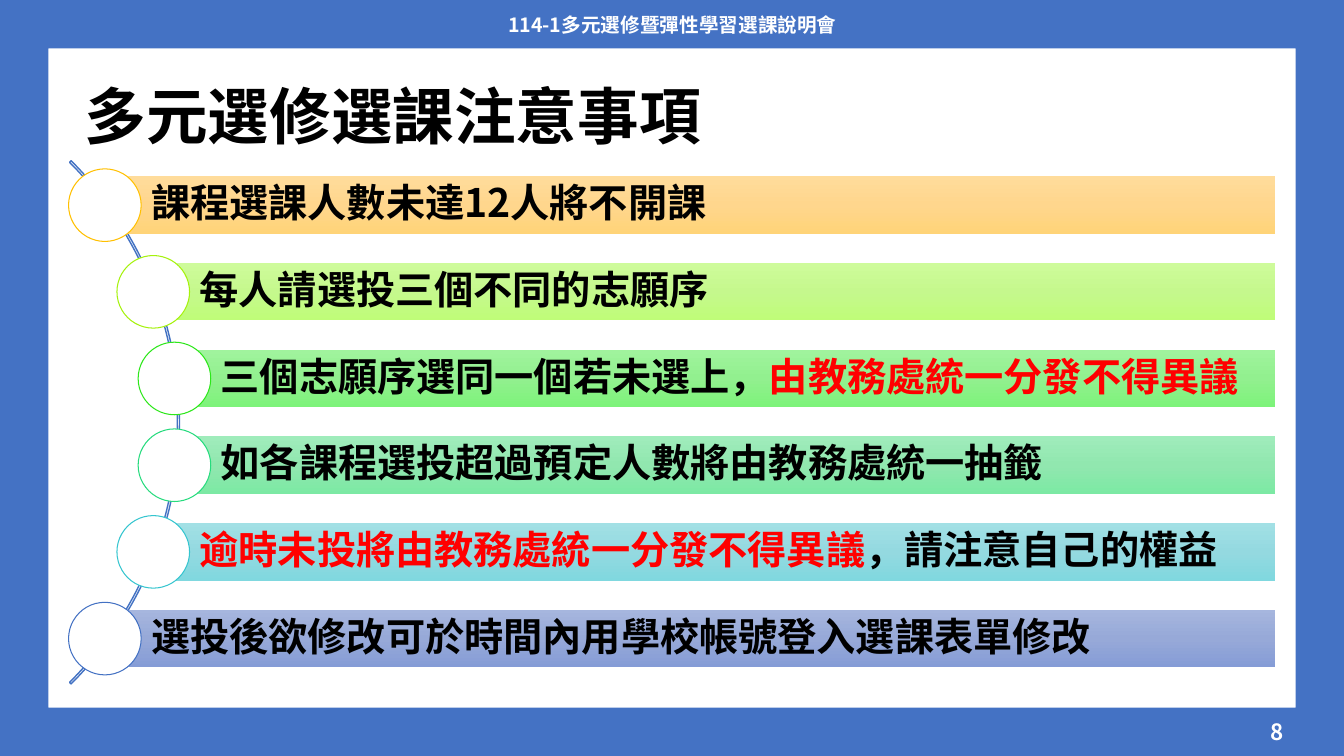
"""Build the slide of course selection notes."""
from dataclasses import dataclass

import pptx
import pptx.dml.color
import pptx.enum.shapes
import pptx.enum.text
import pptx.oxml
import pptx.oxml.ns
import pptx.util
from copy import deepcopy

Inches = pptx.util.Inches
Shape = pptx.enum.shapes.MSO_SHAPE
Align = pptx.enum.text.PP_ALIGN
qn = pptx.oxml.ns.qn


@dataclass(frozen=True)
class Theme:
    font: str = "Noto Sans CJK TC"
    blue: str = "4472C4"
    arc: str = "4372C3"
    white: str = "FFFFFF"
    black: str = "000000"
    red: str = "FF0000"
    title: int = 44
    item: int = 28
    number: int = 16
    header: int = 14


THEME = Theme()


@dataclass(frozen=True)
class Note:
    runs: tuple[tuple[str, str], ...]
    ring: str
    shades: tuple[str, str, str]


NOTES = (
    Note((("課程選課人數未達12人將不開課", THEME.black),),
         "FFC000", ("FFDC9B", "FFD68D", "FFD478")),
    Note((("每人請選投三個不同的志願序", THEME.black),),
         "A5F20C", ("CEFB9B", "C5F88D", "BFFD78")),
    Note((("三個志願序選同一個若未選上，", THEME.black),
          ("由教務處統一分發不得異議", THEME.red)),
         "2DE71A", ("A0F39D", "92F08F", "7DF37A")),
    Note((("如各課程選投超過預定人數將由教務處統一抽籤", THEME.black),),
         "27DB7E", ("9FECBB", "91E7AF", "7CE9A4")),
    Note((("逾時未投將由教務處統一分發不得異議", THEME.red),
          ("，請注意自己的權益", THEME.black)),
         "35C5CF", ("A2E0E5", "94D9E0", "80D8DF")),
    Note((("選投後欲修改可於時間內用學校帳號登入選課表單修改", THEME.black),),
         "4371C3", ("A6B6DE", "97A9D8", "859CD6")),
)
LEFTS = (1.04, 1.52, 1.73)
RIGHT = 12.65
TOP, STEP = 1.75, 0.86
BAR, RING = 0.57, 0.72


def color(code: str) -> pptx.dml.color.RGBColor:
    return pptx.dml.color.RGBColor.from_string(code)


def write(shape, runs, *, size: int, align=Align.LEFT, space: float = 1.0,
          inset=(0.1, 0.05, 0.1, 0.05)) -> None:
    frame = shape.text_frame
    frame.word_wrap = True
    frame.auto_size = pptx.enum.text.MSO_AUTO_SIZE.NONE
    frame.vertical_anchor = pptx.enum.text.MSO_ANCHOR.MIDDLE
    (frame.margin_left, frame.margin_top,
     frame.margin_right, frame.margin_bottom) = map(Inches, inset)
    para = frame.paragraphs[0]
    para.alignment = align
    para.line_spacing = space
    for text, code in runs:
        run = para.add_run()
        run.text = text
        run.font.size = pptx.util.Pt(size)
        run.font.bold = True
        run.font.name = THEME.font
        run.font.color.rgb = color(code)
        east = pptx.oxml.parse_xml(
            f'<a:ea {pptx.oxml.ns.nsdecls("a")} typeface="{THEME.font}"/>')
        run.font._element.find(qn("a:latin")).addnext(east)


def draw(slide, kind, box, *, fill: str | None = None,
         line: str | None = None, width: float = 0.75):
    shape = slide.shapes.add_shape(kind, *map(Inches, box))
    shape.shadow.inherit = False
    if fill:
        shape.fill.solid()
        shape.fill.fore_color.rgb = color(fill)
    else:
        shape.fill.background()
    if line:
        shape.line.color.rgb = color(line)
        shape.line.width = pptx.util.Pt(width)
    else:
        shape.line.fill.background()
    return shape


def blend(shape, shades: tuple[str, str, str]) -> None:
    shape.fill.gradient()
    shape.fill.gradient_angle = 270
    first = shape.element.spPr.find(".//" + qn("a:gs"))
    first.addnext(deepcopy(first))
    for spot, (stop, code) in enumerate(zip(shape.fill.gradient_stops, shades)):
        stop.position = spot / 2
        stop.color.rgb = color(code)


def add_note(slide, row: int, note: Note) -> None:
    left = LEFTS[min(row, len(NOTES) - 1 - row)]
    top = TOP + row * STEP
    bar = draw(slide, Shape.RECTANGLE, (left, top, RIGHT - left, BAR))
    blend(bar, note.shades)
    write(bar, note.runs, size=THEME.item, space=0.9,
          inset=(0.46, 0.08, 0.08, 0.08))
    draw(slide, Shape.OVAL,
         (left - RING / 2, top + (BAR - RING) / 2, RING, RING),
         fill=THEME.white, line=note.ring)


def main() -> None:
    deck = pptx.Presentation()
    deck.slide_width, deck.slide_height = Inches(13.33), Inches(7.5)
    slide = deck.slides.add_slide(deck.slide_layouts[5])

    border = draw(slide, Shape.FRAME, (0, 0, 13.33, 7.5), fill=THEME.blue)
    border.adjustments[0] = 0.064

    title = slide.shapes.title
    title.left, title.top, title.width, title.height = map(
        Inches, (0.74, 0.6, 11.8, 1.18))
    write(title, [("多元選修選課注意事項", THEME.black)],
          size=THEME.title, space=0.9)

    arc = draw(slide, Shape.BLOCK_ARC, (-5.56, 0.52, 7.34, 7.34),
               line=THEME.arc, width=1)
    for spot, value in enumerate((189, 27, 0.003)):
        arc.adjustments[spot] = value

    for row, note in enumerate(NOTES):
        add_note(slide, row, note)

    header = slide.shapes.add_textbox(*map(Inches, (4.42, 0.04, 4.5, 0.4)))
    write(header, [("114-1多元選修暨彈性學習選課說明會", THEME.white)],
          size=THEME.header, align=Align.CENTER)
    number = slide.shapes.add_textbox(*map(Inches, (9.83, 7.06, 3, 0.4)))
    write(number, [("8", THEME.white)], size=THEME.number, align=Align.RIGHT)
    deck.save("out.pptx")


if __name__ == "__main__":
    main()
